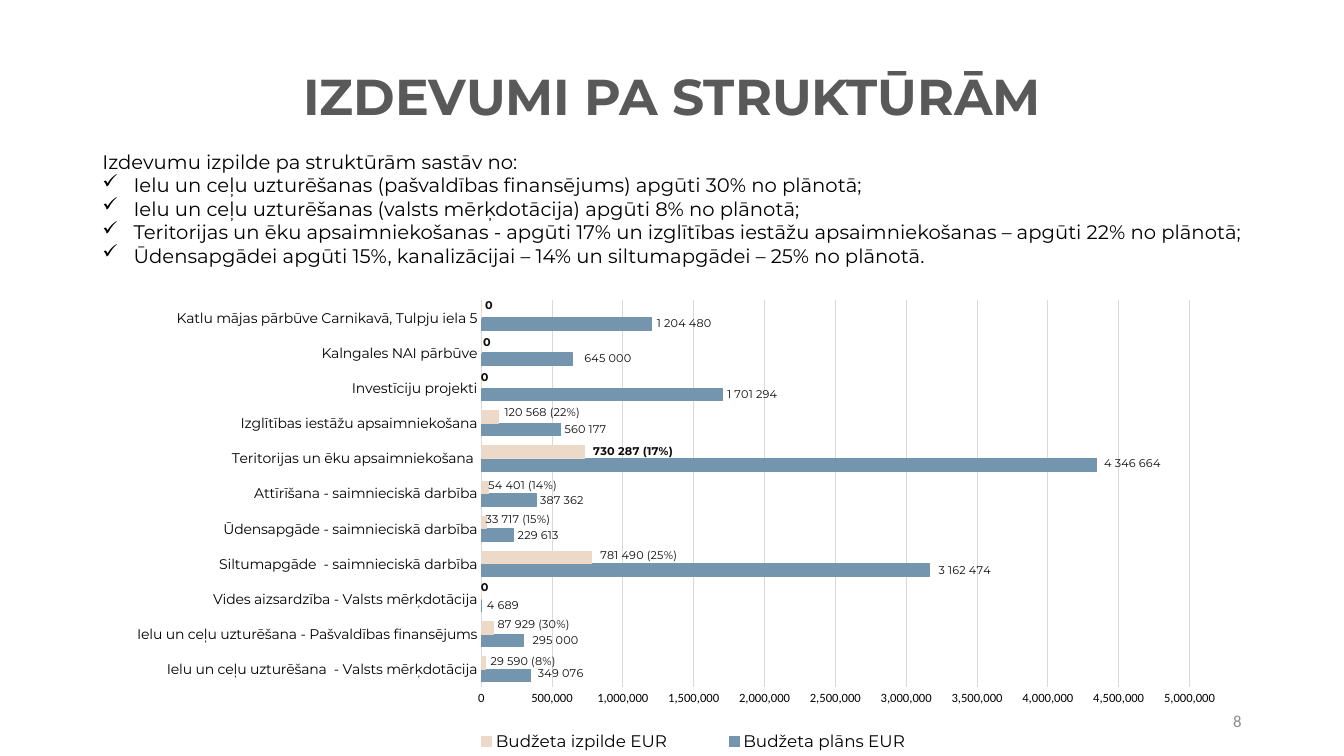
from lxml import etree
from pptx import Presentation
from pptx.chart.data import CategoryChartData
from pptx.dml.color import RGBColor
from pptx.enum.chart import XL_CHART_TYPE as CT, XL_LABEL_POSITION as LP
from pptx.enum.chart import XL_LEGEND_POSITION as LEG, XL_TICK_MARK as TICK
from pptx.enum.text import MSO_ANCHOR as ANC, PP_ALIGN as AL
from pptx.oxml.ns import qn
from pptx.util import Inches, Pt

COLS, ROWS = 160, 90
W, H = Inches(13.33), Inches(7.5)
C = {"bg": "FFFFFF", "title": "595959", "number": "8C8C8C", "text": "000000",
     "label": "0D0D0D", "grid": "D9D9D9", "plan": "7395AD", "spent": "ECD9C8"}
FMT = {
    "title": {"size": Pt(36), "name": "Montserrat", "bold": True, "color": "title"},
    "body": {"size": Pt(14), "name": "Montserrat", "color": "text"},
    "number": {"size": Pt(12), "name": "Calibri", "color": "number"},
    "chart": {"size": Pt(10), "name": "Calibri", "color": "text"},
    "cats": {"size": Pt(10), "name": "Montserrat", "bold": False, "color": "text"},
    "vals": {"size": Pt(9), "name": "Calibri", "bold": False, "color": "text"},
    "legend": {"size": Pt(12), "name": "Montserrat", "color": "text"},
    "label": {"size": Pt(8), "name": "Montserrat", "bold": False, "color": "label"},
    "strong": {"size": Pt(8), "name": "Montserrat", "bold": True, "color": "label"},
}
INTRO = "Izdevumu izpilde pa struktūrām sastāv no:"
POINTS = [
    "Ielu un ceļu uzturēšanas (pašvaldības finansējums) apgūti 30% no plānotā;",
    "Ielu un ceļu uzturēšanas (valsts mērķdotācija) apgūti 8% no plānotā;",
    "Teritorijas un ēku apsaimniekošanas - apgūti 17% un izglītības iestāžu "
    "apsaimniekošanas – apgūti 22% no plānotā;",
    "Ūdensapgādei apgūti 15%, kanalizācijai – 14% un siltumapgādei – 25% no plānotā.",
]
BUDGET = [
    ("Ielu un ceļu uzturēšana  - Valsts mērķdotācija", 349076, 29590, 8),
    ("Ielu un ceļu uzturēšana - Pašvaldības finansējums", 295000, 87929, 30),
    ("Vides aizsardzība - Valsts mērķdotācija", 4689, 0, 0),
    ("Siltumapgāde  - saimnieciskā darbība", 3162474, 781490, 25),
    ("Ūdensapgāde - saimnieciskā darbība", 229613, 33717, 15),
    ("Attīrīšana - saimnieciskā darbība", 387362, 54401, 14),
    ("Teritorijas un ēku apsaimniekošana ", 4346664, 730287, 17),
    ("Izglītības iestāžu apsaimniekošana", 560177, 120568, 22),
    ("Investīciju projekti", 1701294, 0, 0),
    ("Kalngales NAI pārbūve", 645000, 0, 0),
    ("Katlu mājas pārbūve Carnikavā, Tulpju iela 5", 1204480, 0, 0),
]
STRONG_ROW = 6
PLAN_SHIFT = [(3, -4), (5, 0), (1, 0), (5, 0), (0, 0), (0, 0),
              (3, -4), (0, 0), (1, 0), (7, -3), (1, -2)]
SPENT_SHIFT = [(1, -4), (0, -7), (-4, -12), (4, -4), (-4, -7), (-4, -5),
               (4, -2), (2, -10), (-4, -10), (-2, -10), (0, -14)]


def place(x, y, w, h):
    """Turn grid columns and rows into lengths."""
    return [int(v * unit) for v, unit in zip((x, y, w, h), (W / COLS, H / ROWS) * 2)]


def style(font, key):
    """Apply one named text format to a font."""
    for name, value in FMT[key].items():
        if name == "color":
            font.color.rgb = RGBColor.from_string(C[value])
        else:
            setattr(font, name, value)


def add_text(s, box, lines, key, align, anchor=ANC.MIDDLE):
    """Add a text box and return its paragraphs."""
    tf = s.shapes.add_textbox(*place(*box)).text_frame
    tf.word_wrap, tf.vertical_anchor = True, anchor
    for i, line in enumerate(lines):
        p = tf.add_paragraph() if i else tf.paragraphs[0]
        p.alignment = align
        r = p.add_run()
        r.text = line
        style(r.font, key)
    return tf.paragraphs


def add_summary(s, box):
    """Add the introduction with its ticked points."""
    paras = add_text(s, box, [INTRO, *POINTS], "body", AL.JUSTIFY, ANC.TOP)
    indent = Inches(0.31)
    for p in paras[1:]:
        pPr = p._p.get_or_add_pPr()
        pPr.set("marL", str(indent))
        pPr.set("indent", str(-indent))
        etree.SubElement(pPr, qn("a:buChar"), char="✓")


def manual_layout(**values):
    """Build a chart layout element from its settings."""
    layout = etree.Element(qn("c:layout"))
    manual = etree.SubElement(layout, qn("c:manualLayout"))
    for name, value in values.items():
        etree.SubElement(manual, qn(f"c:{name}"), val=str(value))
    return layout


def frame(x, y, w, h, **target):
    """Build a layout fixed to shares of the chart."""
    return manual_layout(**target, xMode="edge", yMode="edge", x=x, y=y, w=w, h=h)


def add_label(point, text, shift, key):
    """Label one bar, moved by thousandths of the chart."""
    label = point.data_label
    if text:
        tf = label.text_frame
        tf.word_wrap = False
        r = tf.paragraphs[0].add_run()
        r.text = text
        style(r.font, key)
    else:
        style(label.font, key)
    label.position = LP.OUTSIDE_END
    dx, dy = shift
    idx = label._dLbl.find(qn("c:idx"))
    idx.addnext(manual_layout(x=dx / 1000, y=dy / 1000))


def style_series(series, key, texts, shifts):
    """Colour a series and label its bars."""
    series.format.fill.solid()
    series.format.fill.fore_color.rgb = RGBColor.from_string(C[key])
    series.format.line.color.rgb = RGBColor.from_string(C[key])
    series.format.line.width = Pt(0.75)
    for i, (text, shift) in enumerate(zip(texts, shifts)):
        strong = not text or (key == "spent" and i == STRONG_ROW)
        add_label(series.points[i], text, shift, "strong" if strong else "label")
    labels = series.data_labels
    labels.show_value, labels.position = True, LP.OUTSIDE_END
    labels.number_format, labels.number_format_is_linked = "#,##0", False
    style(labels.font, "strong")


def style_axes(chart):
    """Format both axes and the gridlines."""
    cat, val = chart.category_axis, chart.value_axis
    for axis, key in ((cat, "cats"), (val, "vals")):
        axis.major_tick_mark = axis.minor_tick_mark = TICK.NONE
        axis.format.line.fill.background()
        style(axis.tick_labels.font, key)
    cat.has_major_gridlines = False
    val.has_major_gridlines = True
    line = val.major_gridlines.format.line
    line.color.rgb, line.width = RGBColor.from_string(C["grid"]), Pt(0.75)
    val.minimum_scale, val.maximum_scale, val.major_unit = 0, 5000000, 500000
    val.tick_labels.number_format = "#,##0"
    val.tick_labels.number_format_is_linked = False


def add_budget_chart(s, box):
    """Add the bars of planned and spent budget."""
    names, plan, spent, shares = zip(*BUDGET)
    data = CategoryChartData(number_format="#,##0")
    data.categories = names
    data.add_series("Budžeta plāns EUR", plan)
    data.add_series("Budžeta izpilde EUR", spent)
    chart = s.shapes.add_chart(CT.BAR_CLUSTERED, *place(*box), data).chart
    chart.has_title = False
    style(chart.font, "chart")
    style_axes(chart)
    plot = chart.plots[0]
    plot.gap_width, plot.overlap, plot.vary_by_categories = 80, 0, False
    plan_texts = [f"{v:,}".replace(",", " ") for v in plan]
    spent_texts = [f"{v:,} ({n}%)".replace(",", " ") if v else ""
                   for v, n in zip(spent, shares)]
    style_series(plot.series[0], "plan", plan_texts, PLAN_SHIFT)
    style_series(plot.series[1], "spent", spent_texts, SPENT_SHIFT)
    chart.has_legend = True
    legend = chart.legend
    legend.position, legend.include_in_layout = LEG.BOTTOM, False
    style(legend.font, "legend")
    area = chart._chartSpace.chart.plotArea
    for old in area.findall(qn("c:layout")):
        area.remove(old)
    area.insert(0, frame(0.33, 0.055, 0.634, 0.802, layoutTarget="inner"))
    for old in legend._element.findall(qn("c:layout")):
        legend._element.remove(old)
    legend_pos = legend._element.find(qn("c:legendPos"))
    legend_pos.addnext(frame(0.28, 0.94, 0.48, 0.06))


def build_slide(prs):
    """Build the slide on spending by structure."""
    s = prs.slides.add_slide(prs.slide_layouts[6])
    s.background.fill.solid()
    s.background.fill.fore_color.rgb = RGBColor.from_string(C["bg"])
    title = add_text(s, (11, 3.1, 138, 17.4), ["IZDEVUMI PA STRUKTŪRĀM"], "title", AL.CENTER)
    title[0].line_spacing = 0.9
    add_text(s, (113, 83.4, 36, 4.8), ["8"], "number", AL.RIGHT)
    add_budget_chart(s, (13.4, 32.6, 133, 57.4))
    add_summary(s, (11, 17.2, 140.8, 15.4))


def main():
    """Create the presentation and save it."""
    prs = Presentation()
    prs.slide_width, prs.slide_height = W, H
    build_slide(prs)
    prs.save("out.pptx")


if __name__ == "__main__":
    main()
